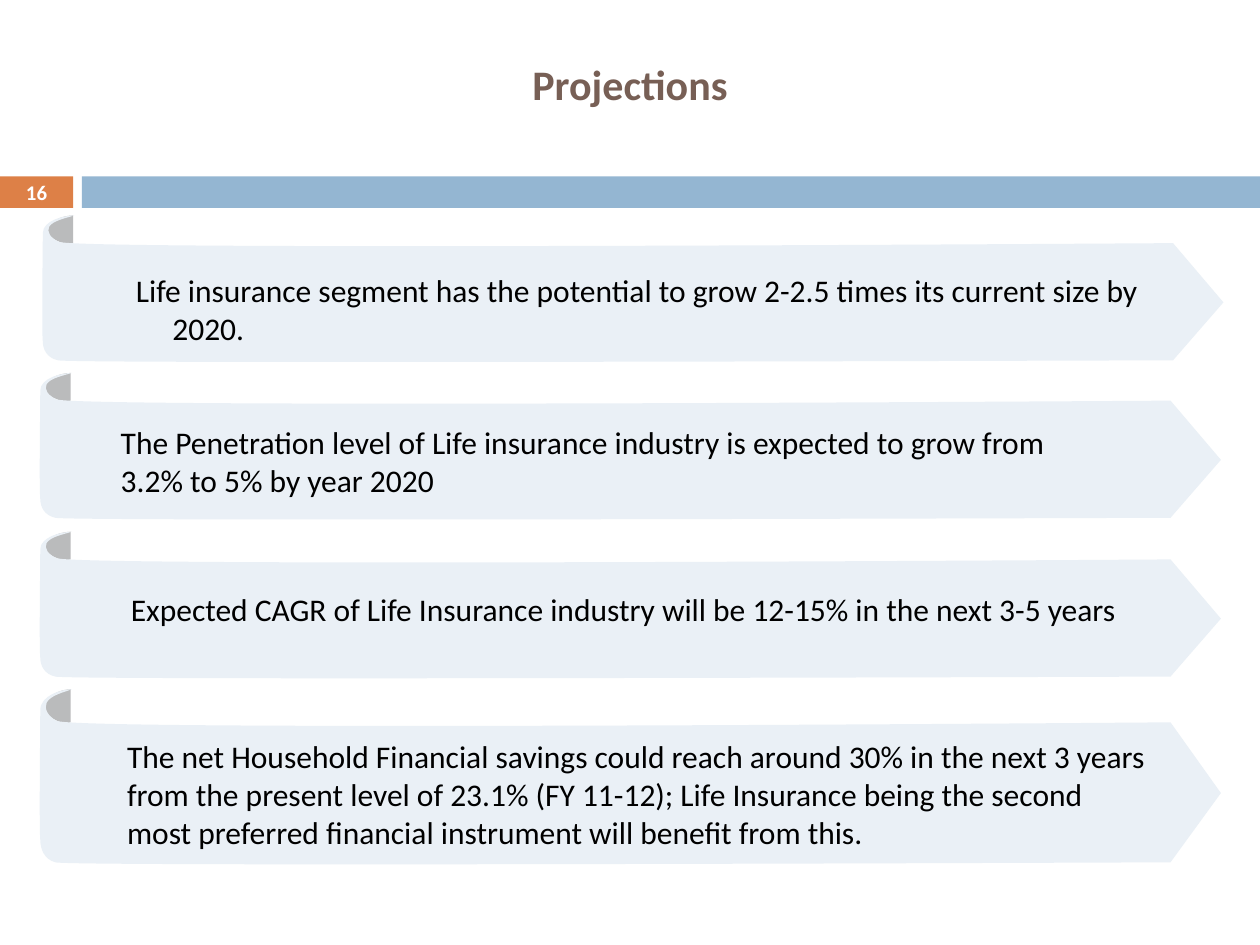
"""Build the Projections slide: four ribbon banners under a title."""
from lxml import etree
from pptx import Presentation
from pptx.dml.color import RGBColor
from pptx.enum.shapes import MSO_SHAPE
from pptx.enum.text import MSO_ANCHOR, PP_ALIGN
from pptx.oxml.ns import qn
from pptx.util import Inches, Pt

RECTANGLE = MSO_SHAPE.RECTANGLE
TOP, MIDDLE = MSO_ANCHOR.TOP, MSO_ANCHOR.MIDDLE
LEFT, CENTER = PP_ALIGN.LEFT, PP_ALIGN.CENTER

COLORS = {
    "title": "775F55", "number": "FFFFFF", "body": "000000",
    "orange": "DD8047", "blue": "94B6D2", "ribbon": "EAF0F6", "curl": "BABBBC",
}
TITLE = "Projections"
PAGE_NUMBER = "16"
PROJECTIONS = [
    {"text": "The Penetration level of Life insurance industry is expected to grow "
             "from 3.2% to 5% by year 2020",
     "ribbon": (0.31, 2.96, 1.18), "box": (0.86, 3.31, 7.97, 0.71)},
    {"text": "Expected CAGR of Life Insurance industry will be 12-15% in the next "
             "3-5 years",
     "ribbon": (0.31, 4.22, 1.18), "box": (0.94, 4.63, 8.28, 0.41)},
    {"text": "Life insurance segment has the potential to grow 2-2.5 times its "
             "current size by 2020.",
     "ribbon": (0.33, 1.71, 1.18), "box": (0.98, 2.1, 8.35, 0.71),
     "hanging": 0.29, "after": 12},
    {"text": "The net Household Financial savings could reach around 30% in the next "
             "3 years from the present level of 23.1% (FY 11-12); Life Insurance "
             "being the second most preferred financial instrument will benefit "
             "from this.",
     "ribbon": (0.31, 5.47, 1.41), "box": (0.91, 5.8, 8.35, 1.01)},
]

RIBBON_HEIGHT = 1.18
CURL = [
    [(0.25, 0)],
    [(0.25, 0), (0.11, 0), (0.05, 0.09)],
    [(0, 0.17), (0.2, 0.25), (0.25, 0.22)],
    [(0.25, 0)],
]
RIBBON = [
    [(9.38, 0.69)],
    [(8.98, 1.15), (8.98, 1.15), (8.98, 1.15)],
    [(8.98, 1.15), (0.22, 1.18), (0.13, 1.15)],
    [(0.04, 1.13), (0.01, 1.06), (0.01, 1)],
    [(0, 0.93), (0.01, 0.23), (0.01, 0.14)],
    [(0.01, 0.04), (0.18, 0), (0.26, 0)],
    [(0.2, 0.02), (0.09, 0.04), (0.06, 0.09)],
    [(0.04, 0.13), (0.07, 0.18), (0.14, 0.21)],
    [(0.32, 0.28), (8.98, 0.22), (8.98, 0.22)],
    [(9.38, 0.69)],
]


def paint(shape, color):
    shape.shadow.inherit = False
    shape.fill.solid()
    shape.fill.fore_color.rgb = RGBColor.from_string(COLORS[color])
    shape.line.fill.background()


def place(shape, box):
    shape.left, shape.top, shape.width, shape.height = map(Inches, box)


def write(shape, text, size=18, color="body", bold=False, align=LEFT,
          anchor=TOP, hanging=0, after=0):
    frame = shape.text_frame
    frame.word_wrap = True
    frame.vertical_anchor = anchor
    paragraph = frame.paragraphs[0]
    paragraph.alignment = align
    paragraph.space_after = Pt(after)
    if hanging:
        properties = paragraph._p.get_or_add_pPr()
        properties.set("marL", str(Inches(hanging)))
        properties.set("indent", str(-Inches(hanging)))
    run = paragraph.add_run()
    run.text = text
    run.font.name = "Calibri"
    run.font.size = Pt(size)
    run.font.bold = bold
    run.font.color.rgb = RGBColor.from_string(COLORS[color])


def bar(slide, box, color):
    shape = slide.shapes.add_shape(RECTANGLE, *map(Inches, box))
    paint(shape, color)


def bend(shape, segments):
    """Turn each run of three line points into one cubic curve."""
    lines = iter(list(shape._element.iter(qn("a:lnTo"))))
    for segment in segments:
        parts = [next(lines) for _ in segment]
        if len(parts) == 3:
            curve = etree.Element(qn("a:cubicBezTo"))
            parts[0].addprevious(curve)
            for part in parts:
                curve.append(part[0])
                part.getparent().remove(part)


def draw_outline(group, segments, position, color):
    left, top, height = position
    stretch = height / RIBBON_HEIGHT
    points = [(Inches(left + x), Inches(top + y * stretch))
              for segment in segments for x, y in segment]
    builder = group.shapes.build_freeform(*points[0])
    builder.add_line_segments(points[1:], close=True)
    shape = builder.convert_to_shape()
    bend(shape, segments[1:])
    paint(shape, color)


def main():
    deck = Presentation()
    deck.slide_width, deck.slide_height = Inches(10), Inches(7.5)
    slide = deck.slides.add_slide(deck.slide_layouts[5])

    bar(slide, (0, 1.4, 0.58, 0.25), "orange")
    bar(slide, (0.65, 1.4, 9.35, 0.25), "blue")

    title = slide.shapes.title
    place(title, (0, 0, 10, 1.33))
    write(title, TITLE, size=24, color="title", bold=True, align=CENTER, anchor=MIDDLE)

    for projection in PROJECTIONS:
        banner = slide.shapes.add_group_shape()
        draw_outline(banner, CURL, projection["ribbon"], "curl")
        draw_outline(banner, RIBBON, projection["ribbon"], "ribbon")
        caption = banner.shapes.add_textbox(*map(Inches, projection["box"]))
        write(caption, projection["text"], hanging=projection.get("hanging", 0),
              after=projection.get("after", 0))

    number = slide.shapes.add_textbox(*map(Inches, (0, 1.39, 0.58, 0.27)))
    write(number, PAGE_NUMBER, size=11.9, color="number", bold=True,
          align=CENTER, anchor=MIDDLE)

    deck.save("out.pptx")


if __name__ == "__main__":
    main()
